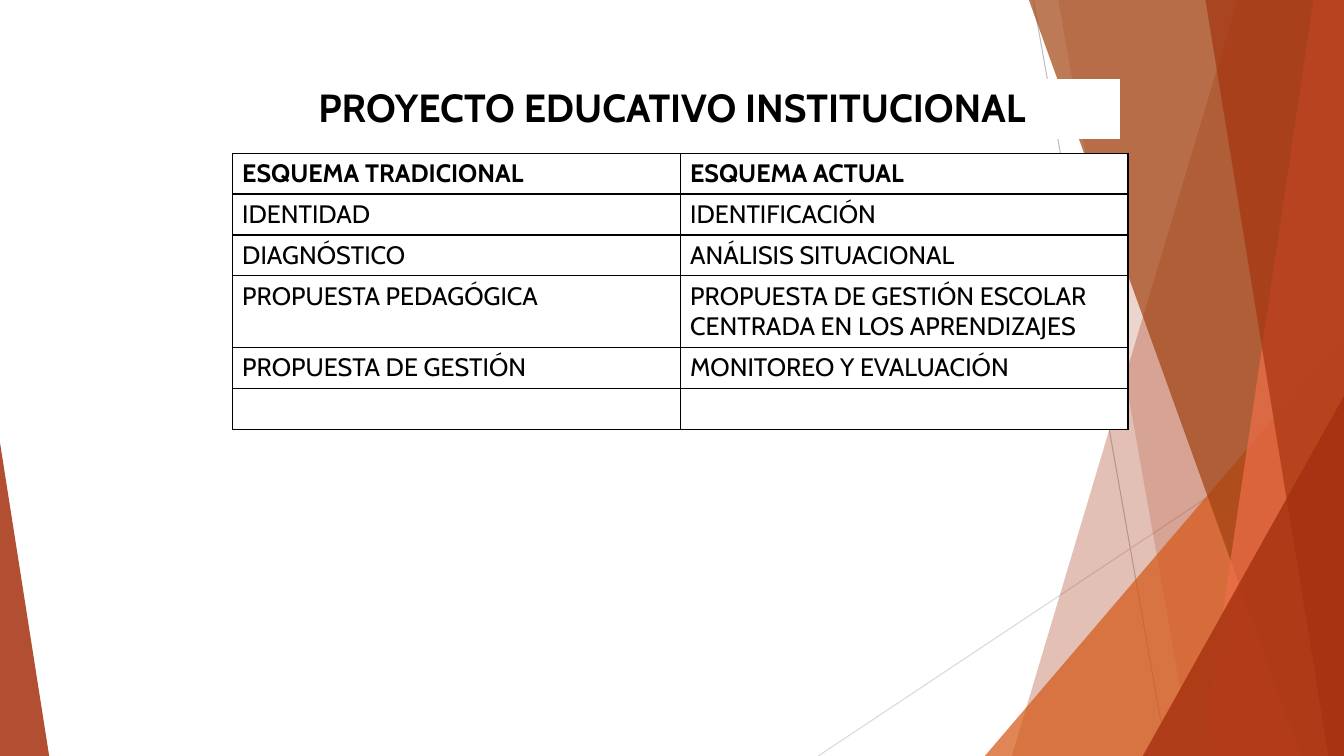
from lxml.etree import SubElement
from pptx import Presentation
from pptx.dml.color import RGBColor
from pptx.enum.shapes import MSO_CONNECTOR, MSO_SHAPE
from pptx.enum.text import PP_ALIGN
from pptx.oxml.ns import qn
from pptx.util import Cm, Pt

WIDTH, HEIGHT = 33.87, 19.05
SCHEMES = {
    "rows": [
        ("ESQUEMA TRADICIONAL", "ESQUEMA ACTUAL"),
        ("IDENTIDAD", "IDENTIFICACIÓN"),
        ("DIAGNÓSTICO", "ANÁLISIS SITUACIONAL"),
        ("PROPUESTA PEDAGÓGICA", "PROPUESTA DE GESTIÓN ESCOLAR CENTRADA EN LOS APRENDIZAJES"),
        ("PROPUESTA DE GESTIÓN", "MONITOREO Y EVALUACIÓN"),
        ("", ""),
    ],
    "corner": (5.85, 3.86),
    "column_width": 11.29,
    "heights": [1.03, 1.03, 1.03, 1.8, 1.03, 1.03],
    "font": {"name": "Cabin", "size": Pt(18)},
    "align": PP_ALIGN.LEFT,
    "border": "000000",
    "edges": {"lnL": 1, "lnR": 1, "lnT": 1, "lnB": 1},
}
HEADING = {
    "rows": [("PROYECTO EDUCATIVO INSTITUCIONAL",)],
    "corner": (5.64, 2.0),
    "column_width": 22.58,
    "heights": [1.45],
    "font": {"name": "Cabin", "size": Pt(28)},
    "align": PP_ALIGN.CENTER,
    "border": "FFFFFF",
    "edges": {"lnL": 1, "lnR": 1, "lnT": 1, "lnB": 3},
}
RAYS = [
    (26.04, 0, 29.41, HEIGHT, "BFBFBF"),
    (WIDTH, 10.24, 20.62, HEIGHT, "D9D9D9"),
]
FACETS = [
    ("band", (31.19, 25.5), "A5300F", 30),
    ("band", (26.67, 30.05), "A5300F", 20),
    ("triangle", (24.82, 8.46, 9.05, 1), "D55816", 72),
    ("band", (25.93, 32.79), "A04210", 70),
    ("band", (33.1, 30.28), "EE6E4A", 70),
    ("band", (30.38, 33.48), "A5300F", 65),
    ("triangle", (28.8, 9.98, 5.07, 1), "A5300F", 80),
    ("triangle", (0, 11.15, 1.24, 0), "A5300F", 85),
]


def color(value):
    return RGBColor.from_string(value)


def paint(target, value):
    target.fill.solid()
    target.fill.fore_color.rgb = color(value)


def add_ray(page, x1, y1, x2, y2, value):
    ray = page.shapes.add_connector(MSO_CONNECTOR.STRAIGHT, Cm(x1), Cm(y1), Cm(x2), Cm(y2))
    ray.line.color.rgb = color(value)
    ray.line.width = Pt(0.75)
    SubElement(ray.element.spPr, qn("a:effectLst"))


def add_band(page, top_x, bottom_x):
    builder = page.shapes.build_freeform(Cm(top_x), 0)
    corners = [(WIDTH, 0), (WIDTH, HEIGHT), (bottom_x, HEIGHT)]
    builder.add_line_segments([(Cm(x), Cm(y)) for x, y in corners], close=True)
    return builder.convert_to_shape()


def add_triangle(page, left, top, width, apex):
    triangle = page.shapes.add_shape(
        MSO_SHAPE.ISOSCELES_TRIANGLE, Cm(left), Cm(top), Cm(width), Cm(HEIGHT - top)
    )
    triangle.adjustments[0] = apex
    return triangle


def add_facet(page, kind, geometry, value, opacity):
    draw = {"band": add_band, "triangle": add_triangle}[kind]
    facet = draw(page, *geometry)
    facet.shadow.inherit = False
    facet.line.fill.background()
    paint(facet, value)
    tint = facet.element.spPr.find(qn("a:solidFill"))[0]
    SubElement(tint, qn("a:alpha"), val=str(opacity * 1000))


def add_borders(cell, value, edges):
    properties = cell._tc.get_or_add_tcPr()
    for side, width in edges.items():
        edge = SubElement(properties, qn(f"a:{side}"), w=str(Pt(width)))
        SubElement(SubElement(edge, qn("a:solidFill")), qn("a:srgbClr"), val=value)


def write(cell, text, align, values):
    para = cell.text_frame.paragraphs[0]
    para.alignment = align
    span = para.add_run()
    span.text = text
    span.font.color.rgb = color("000000")
    for name, value in values.items():
        setattr(span.font, name, value)


def add_grid(page, design):
    rows, heights = design["rows"], design["heights"]
    left, top = design["corner"]
    columns, column_width = len(rows[0]), design["column_width"]
    table = page.shapes.add_table(
        len(rows), columns, Cm(left), Cm(top), Cm(column_width * columns), Cm(sum(heights))
    ).table
    table.first_row = table.horz_banding = False
    for column in table.columns:
        column.width = Cm(column_width)
    for index, (row, height) in enumerate(zip(table.rows, heights)):
        row.height = Cm(height)
        for cell, text in zip(row.cells, rows[index]):
            add_borders(cell, design["border"], design["edges"])
            paint(cell, "FFFFFF")
            if text:
                write(cell, text, design["align"], {**design["font"], "bold": index == 0})


def main():
    deck = Presentation()
    deck.slide_width, deck.slide_height = Cm(WIDTH), Cm(HEIGHT)
    page = deck.slides.add_slide(deck.slide_layouts[6])
    for ray in RAYS:
        add_ray(page, *ray)
    for facet in FACETS:
        add_facet(page, *facet)
    for design in (SCHEMES, HEADING):
        add_grid(page, design)
    deck.save("out.pptx")


if __name__ == "__main__":
    main()
